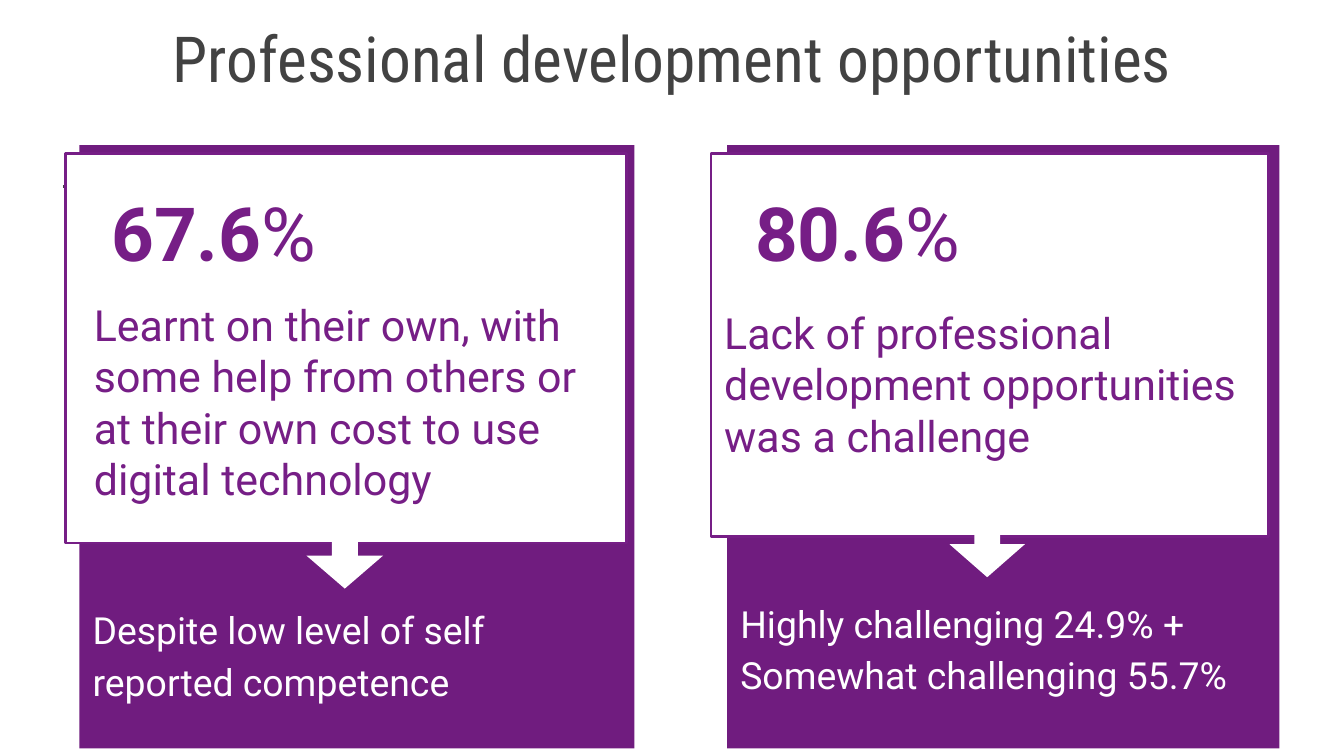
from dataclasses import dataclass

from lxml import etree
from pptx import Presentation
from pptx import util as u
from pptx.dml.color import RGBColor
from pptx.enum import dml, shapes, text
from pptx.oxml.ns import qn


@dataclass(frozen=True)
class Theme:
    panel: str = "701C7F"
    accent: str = "761E86"
    white: str = "FFFFFF"
    dark: str = "424242"
    heading_font: str = "Roboto Condensed"
    body_font: str = "Roboto"
    title: int = 34
    figure: int = 40
    finding: int = 23
    detail: int = 20
    line: float = 1.5
    spacing: float = 1.15


THEME = Theme()
WIDTH = 10
HEIGHT = WIDTH * 9 / 16

TITLE = "Professional development opportunities"
TITLE_BOX = (1, 1.42, 98, 12.98)
DASH = (4.7, 11.4, 24.71)
CARDS = [
    {
        "figure": "80.6",
        "finding": "Lack of professional development opportunities was a challenge",
        "detail": ["Highly challenging 24.9% +", "Somewhat challenging 55.7%"],
        "panel_box": (54.1, 19.2, 41.1, 79.82),
        "front_box": (52.9, 20.27, 41.5, 50.67),
        "finding_box": (52.9, 38.76, 41.1, 32.36),
        "figure_box": (55.2, 22.93, 36.7, 13.16),
        "arrow_box": (71.3, 67.56, 4.3, 9.96),
        "detail_box": (54.1, 76.8, 39.9, 22.22),
    },
    {
        "figure": "67.6",
        "finding": "Learnt on their own, with some help from others or at their own cost to use digital technology",
        "detail": ["Despite low level of self reported competence"],
        "panel_box": (5.9, 19.2, 41.3, 79.82),
        "front_box": (4.9, 20.27, 41.7, 51.56),
        "finding_box": (6, 37.69, 40.1, 31.29),
        "figure_box": (7.3, 22.93, 36.9, 13.16),
        "arrow_box": (23.5, 68.98, 4.3, 10.13),
        "detail_box": (5.9, 77.69, 40.1, 21.33),
    },
]


def across(percent):
    return u.Inches(WIDTH * percent / 100)


def down(percent):
    return u.Inches(HEIGHT * percent / 100)


def place(box):
    left, top, width, height = box
    return across(left), down(top), across(width), down(height)


def write(shape, paragraphs, *, size, color, font=THEME.body_font,
          align=text.PP_ALIGN.LEFT, anchor=text.MSO_ANCHOR.TOP, spacing=1.0):
    frame = shape.text_frame
    frame.word_wrap = True
    frame.auto_size = text.MSO_AUTO_SIZE.NONE
    frame.vertical_anchor = anchor
    frame.margin_left = frame.margin_right = u.Inches(0.1)
    frame.margin_top = frame.margin_bottom = u.Inches(0.1)
    for index, runs in enumerate(paragraphs):
        paragraph = frame.add_paragraph() if index else frame.paragraphs[0]
        paragraph.alignment = align
        paragraph.line_spacing = spacing
        paragraph.space_before = paragraph.space_after = u.Pt(0)
        for words, bold in runs:
            run = paragraph.add_run()
            run.text = words
            run.font.name = font
            run.font.size = u.Pt(size)
            run.font.bold = bold
            run.font.color.rgb = RGBColor.from_string(color)


def add_block(parent, kind, box, fill, line=None):
    shape = parent.add_shape(kind, *place(box))
    shape.shadow.inherit = False
    shape.fill.solid()
    shape.fill.fore_color.rgb = RGBColor.from_string(fill)
    if line:
        shape.line.color.rgb = RGBColor.from_string(line)
        shape.line.width = u.Pt(THEME.line)
    else:
        shape.line.fill.background()
    return shape


def add_dash(slide):
    start, end, level = DASH
    line = slide.shapes.add_connector(
        shapes.MSO_CONNECTOR.STRAIGHT, across(start), down(level), across(end), down(level))
    line.line.color.rgb = RGBColor.from_string(THEME.dark)
    line.line.width = u.Pt(THEME.line)
    line.line.dash_style = dml.MSO_LINE.LONG_DASH
    etree.SubElement(line.element.spPr, qn("a:effectLst"))


def add_card(slide, card):
    parent = slide.shapes.add_group_shape().shapes
    rectangle = shapes.MSO_SHAPE.RECTANGLE
    add_block(parent, rectangle, card["panel_box"], THEME.panel)
    add_block(parent, rectangle, card["front_box"], THEME.white, THEME.accent)
    write(parent.add_textbox(*place(card["finding_box"])), [[(card["finding"], False)]],
          size=THEME.finding, color=THEME.accent)
    write(parent.add_textbox(*place(card["figure_box"])),
          [[(card["figure"], True), ("%", False)]],
          size=THEME.figure, color=THEME.accent)
    arrow = add_block(parent, shapes.MSO_SHAPE.RIGHT_ARROW, card["arrow_box"], THEME.white)
    arrow.rotation = 90
    arrow.adjustments[0] = 0.34
    arrow.adjustments[1] = 0.57
    write(parent.add_textbox(*place(card["detail_box"])),
          [[(words, False)] for words in card["detail"]],
          size=THEME.detail, color=THEME.white, spacing=THEME.spacing)


def main():
    presentation = Presentation()
    presentation.slide_width = u.Inches(WIDTH)
    presentation.slide_height = u.Inches(HEIGHT)
    slide = presentation.slides.add_slide(presentation.slide_layouts[5])
    add_dash(slide)
    title = slide.shapes.title
    title.left, title.top, title.width, title.height = place(TITLE_BOX)
    write(title, [[(TITLE, False)]], size=THEME.title, color=THEME.dark,
          font=THEME.heading_font, align=text.PP_ALIGN.CENTER,
          anchor=text.MSO_ANCHOR.BOTTOM, spacing=THEME.spacing)
    for card in CARDS:
        add_card(slide, card)
    presentation.save("out.pptx")


if __name__ == "__main__":
    main()
